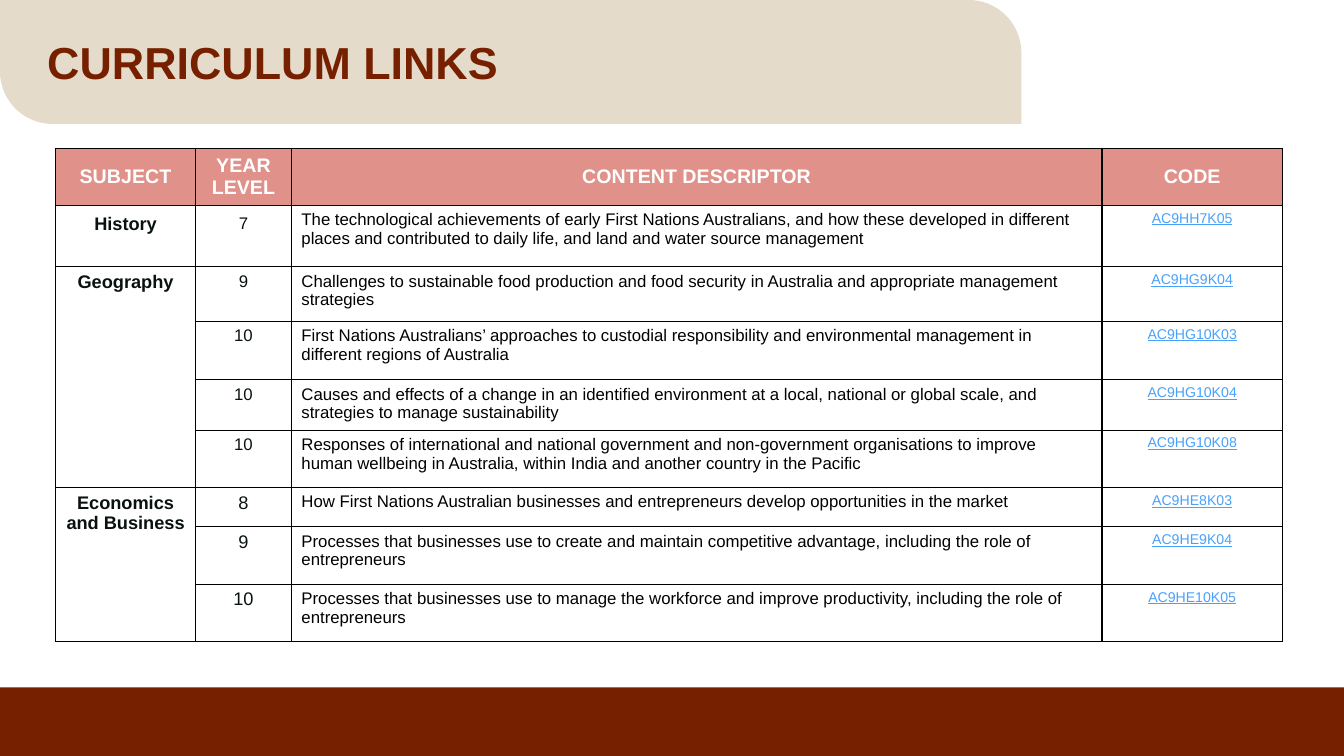
from dataclasses import dataclass

from lxml.etree import SubElement
from pptx import Presentation
from pptx.dml.color import RGBColor
from pptx.enum.shapes import MSO_SHAPE as Shape
from pptx.enum.text import MSO_ANCHOR as Anchor, PP_ALIGN as Align
from pptx.oxml.ns import qn
from pptx.util import Inches, Pt

BROWN, SAND, ROSE = "762000", "E5DBCB", "DF918A"
WHITE, BLACK, INK, BLUE = "FFFFFF", "000000", "091211", "48A1FA"


@dataclass
class Style:
    size: float
    color: str
    bold: bool = False
    line: bool = False
    align: Align = Align.CENTER
    lead: float = 1.0
    after: float = 0


@dataclass
class Link:
    """One row of the table; span counts the rows its subject covers."""
    subject: str
    span: int
    year: str
    text: str
    code: str
    height: float


TITLE = Style(32, BROWN, True, align=Align.LEFT, lead=0.9)
HEAD = Style(14, WHITE, True)
BODY = Style(12, BLACK, align=Align.LEFT)
CODE = Style(10.1, BLUE, line=True)

HEADS = ["SUBJECT", "YEAR LEVEL", "CONTENT DESCRIPTOR", "CODE"]
WIDTHS = [1.39, 0.95, 8.04, 1.79]
HEAD_HIGH = 0.55
LINKS = [
    Link("History", 1, "7", "The technological achievements of early First Nations Australians, and how these "
         "developed in different places and contributed to daily life, and land and water source management",
         "AC9HH7K05", 0.61),
    Link("Geography", 4, "9", "Challenges to sustainable food production and food security in Australia and "
         "appropriate management strategies", "AC9HG9K04", 0.54),
    Link("", 0, "10", "First Nations Australians’ approaches to custodial responsibility and environmental "
         "management in different regions of Australia", "AC9HG10K03", 0.58),
    Link("", 0, "10", "Causes and effects of a change in an identified environment at a local, national or "
         "global scale, and strategies to manage sustainability", "AC9HG10K04", 0.48),
    Link("", 0, "10", "Responses of international and national government and non-government organisations to "
         "improve human wellbeing in Australia, within India and another country in the Pacific",
         "AC9HG10K08", 0.57),
    Link("Economics and Business", 3, "8", "How First Nations Australian businesses and entrepreneurs develop "
         "opportunities in the market", "AC9HE8K03", 0.39),
    Link("", 0, "9", "Processes that businesses use to create and maintain competitive advantage, including "
         "the role of entrepreneurs", "AC9HE9K04", 0.57),
    Link("", 0, "10", "Processes that businesses use to manage the workforce and improve productivity, "
         "including the role of entrepreneurs", "AC9HE10K05", 0.57),
]


def rgb(color: str) -> RGBColor:
    return RGBColor.from_string(color)


def write(frame, text: str, style: Style) -> None:
    para = frame.paragraphs[0]
    form = {"alignment": style.align, "line_spacing": style.lead, "space_after": Pt(style.after)}
    for name, value in form.items():
        setattr(para, name, value)
    run = para.add_run()
    run.text = text
    form = {"name": "Arial", "size": Pt(style.size), "bold": style.bold, "underline": style.line}
    for name, value in form.items():
        setattr(run.font, name, value)
    run.font.color.rgb = rgb(style.color)


def panel(slide, kind: Shape, box: list[float], color: str):
    shape = slide.shapes.add_shape(kind, *map(Inches, box))
    shape.shadow.inherit = False
    shape.fill.solid()
    shape.fill.fore_color.rgb = rgb(color)
    shape.line.fill.background()
    return shape


def border(cell) -> None:
    props = cell._tc.get_or_add_tcPr()
    for side in ("lnL", "lnR", "lnT", "lnB"):
        edge = SubElement(props, qn(f"a:{side}"), w=str(Pt(1)))
        fill = SubElement(edge, qn("a:solidFill"))
        SubElement(fill, qn("a:srgbClr"), val=BLACK)


def add_links(slide) -> None:
    heights = [HEAD_HIGH] + [link.height for link in LINKS]
    box = map(Inches, (0.55, 1.47, sum(WIDTHS), sum(heights)))
    table = slide.shapes.add_table(len(heights), len(WIDTHS), *box).table
    table.first_row = table.horz_banding = False
    for col, width in zip(table.columns, WIDTHS):
        col.width = Inches(width)
    for row, height in zip(table.rows, heights):
        row.height = Inches(height)
    for cell in table.iter_cells():
        border(cell)
        cell.fill.background()
    for col, text in enumerate(HEADS):
        cell = table.cell(0, col)
        cell.fill.solid()
        cell.fill.fore_color.rgb = rgb(ROSE)
        cell.vertical_anchor = Anchor.MIDDLE
        write(cell.text_frame, text, HEAD)
    for row, link in enumerate(LINKS, 1):
        lead, after = (1.19, 6) if row == 1 else (1.0, 0)
        if link.span:
            group = Style(13, INK, True, lead=lead, after=after)
            write(table.cell(row, 0).text_frame, link.subject, group)
        if link.span > 1:
            table.cell(row, 0).merge(table.cell(row + link.span - 1, 0))
        year = Style(12 if row < 6 else 13, INK, lead=lead, after=after)
        parts = [(link.year, year), (link.text, BODY), (link.code, CODE)]
        for col, (text, style) in enumerate(parts, 1):
            write(table.cell(row, col).text_frame, text, style)


def main() -> None:
    deck = Presentation()
    deck.slide_width, deck.slide_height = Inches(13.33), Inches(7.5)
    slide = deck.slides.add_slide(deck.slide_layouts[6])
    panel(slide, Shape.RECTANGLE, [0, 6.82, 13.33, 0.68], BROWN)
    banner = panel(slide, Shape.ROUND_2_DIAG_RECTANGLE, [0, 0, 10.13, 1.23], SAND)
    banner.adjustments[0], banner.adjustments[1] = 0, 0.425
    title = slide.shapes.add_textbox(*map(Inches, (0.37, 0.21, 9.37, 0.87))).text_frame
    title.word_wrap = True
    title.vertical_anchor = Anchor.MIDDLE
    write(title, "CURRICULUM LINKS", TITLE)
    add_links(slide)
    deck.save("out.pptx")


if __name__ == "__main__":
    main()
